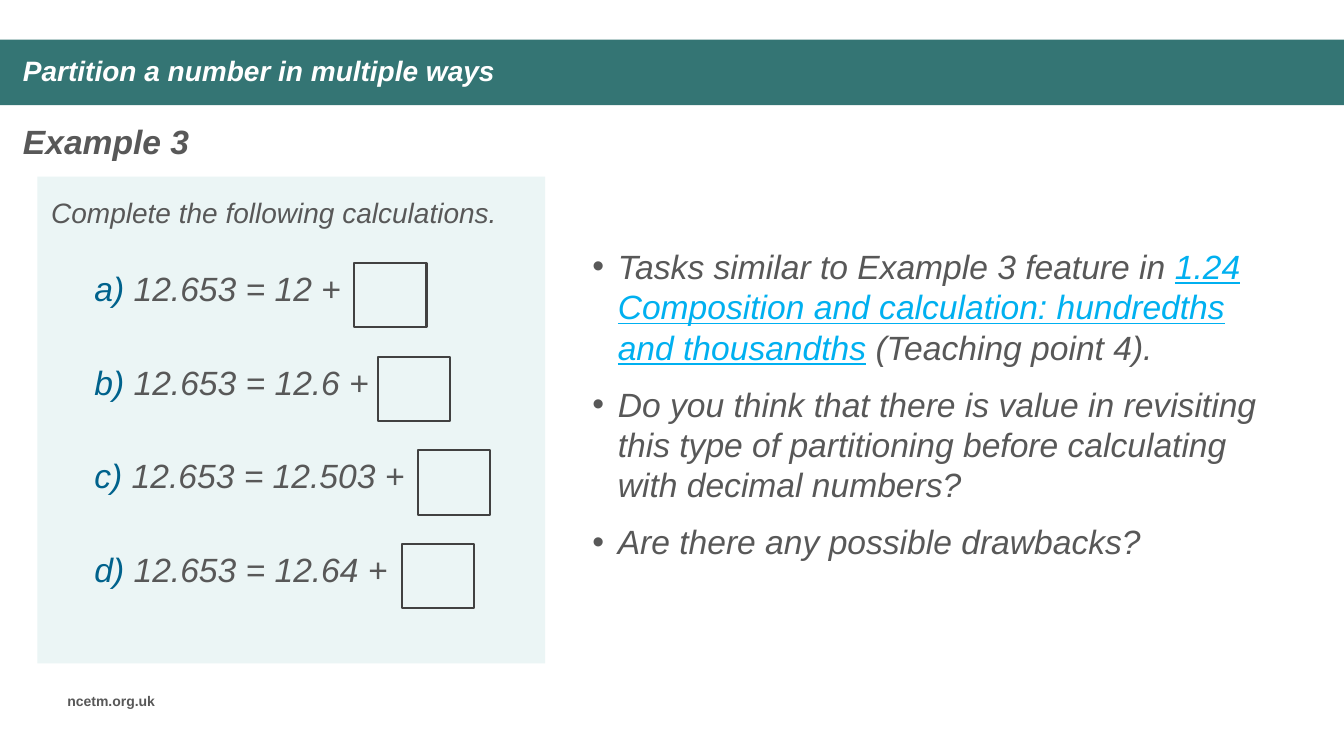
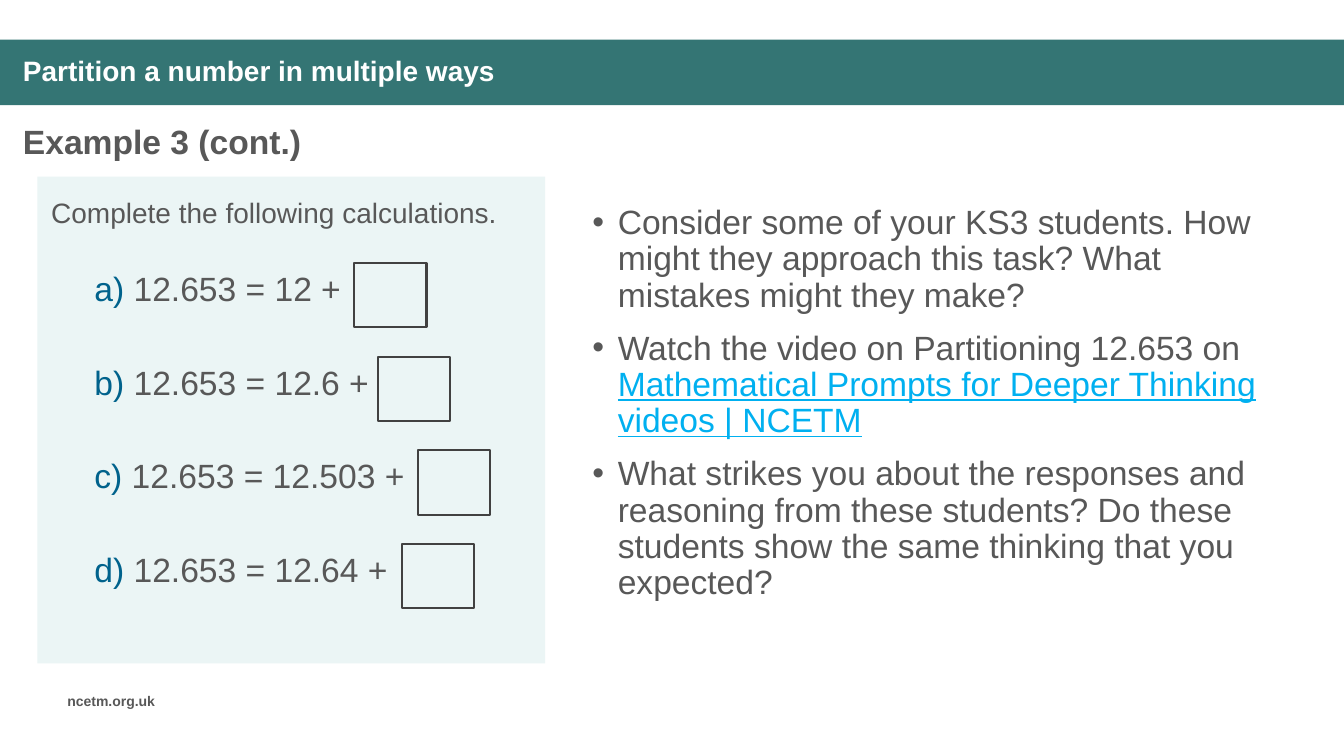
from dataclasses import dataclass

from lxml.etree import SubElement
from pptx import Presentation
from pptx.dml.color import RGBColor
from pptx.enum.shapes import MSO_SHAPE
from pptx.enum.text import MSO_ANCHOR
from pptx.oxml.ns import qn
from pptx.util import Cm, Pt


@dataclass(frozen=True)
class Theme:
    font: str = "Arial"
    band: str = "347574"
    panel: str = "EBF5F5"
    text: str = "585858"
    label: str = "00628C"
    link: str = "00B0F0"
    outline: str = "414141"
    white: str = "FFFFFF"
    body_size: int = 24
    title_size: int = 20
    footer_size: int = 10


THEME = Theme()
SLIDE_WIDTH, SLIDE_HEIGHT = 33.87, 19.05

TITLE = "Partition a number in multiple ways"
INSTRUCTION = "Complete the following calculations."
FOOTER = "ncetm.org.uk"

# Label, calculation and left edge of its answer box
CALCULATIONS = [
    ("a) ", "12.653 = 12 +", 8.93),
    ("b) ", "12.653 = 12.6 +", 9.53),
    ("c) ", "12.653 = 12.503 +", 10.53),
    ("d) ", "12.653 = 12.64 +", 10.13),
]
CALCULATION_LEFT, CALCULATION_TOP, CALCULATION_STEP = 2.13, 6.63, 2.36
ANSWER_WIDTH, ANSWER_HEIGHT = 1.82, 1.62


def link(text):
    return text, {"color": THEME.link, "underline": True}


SLIDES = [
    {
        "heading": "Example 3",
        "italic": True,
        "line_spacing": 1.0,
        "bullets": [
            ["Tasks similar to Example 3 feature in ",
             link("1.24 Composition and calculation: hundredths and thousandths"),
             " (Teaching point 4)."],
            ["Do you think that there is value in revisiting this type of "
             "partitioning before calculating with decimal numbers?"],
            ["Are there any possible drawbacks?"],
        ],
    },
    {
        "heading": "Example 3 (cont.)",
        "italic": False,
        "line_spacing": 0.9,
        "bullets": [
            ["Consider some of your KS3 students. How might they approach "
             "this task? What mistakes might they make?"],
            ["Watch the video on Partitioning 12.653 on ",
             link("Mathematical Prompts for Deeper Thinking videos | NCETM")],
            ["What strikes you about the responses and reasoning from these "
             "students? Do these students show the same thinking that you "
             "expected?"],
        ],
    },
]


def add_bullet(paragraph):
    properties = paragraph._p.get_or_add_pPr()
    properties.set("marL", str(Cm(0.99)))
    properties.set("indent", str(-Cm(0.64)))
    SubElement(properties, qn("a:buFont")).set("typeface", THEME.font)
    SubElement(properties, qn("a:buChar")).set("char", "•")


def add_text(slide, paragraphs, left, top, width, height, *, size=THEME.body_size,
             color=THEME.text, bold=False, italic=False, bullets=False,
             line_spacing=None, space_after=0, anchor=MSO_ANCHOR.TOP,
             right_inset=0.25):
    """Each paragraph is a list of runs: plain text, or (text, format changes)."""
    shape = slide.shapes.add_textbox(Cm(left), Cm(top), Cm(width), Cm(height))
    frame = shape.text_frame
    frame.word_wrap = True
    frame.vertical_anchor = anchor
    frame.margin_right = Cm(right_inset)
    for index, runs in enumerate(paragraphs):
        paragraph = frame.add_paragraph() if index else frame.paragraphs[0]
        if bullets:
            add_bullet(paragraph)
        paragraph.line_spacing = line_spacing
        paragraph.space_after = Pt(space_after)
        for item in runs:
            text, changes = (item, {}) if isinstance(item, str) else item
            run = paragraph.add_run()
            run.text = text
            font = run.font
            font.name, font.size = THEME.font, Pt(size)
            font.bold, font.italic = bold, italic
            font.underline = changes.get("underline", False)
            font.color.rgb = RGBColor.from_string(changes.get("color", color))


def add_rectangle(slide, left, top, width, height, *, fill=None, line=None):
    shape = slide.shapes.add_shape(
        MSO_SHAPE.RECTANGLE, Cm(left), Cm(top), Cm(width), Cm(height))
    shape.shadow.inherit = False
    if fill:
        shape.fill.solid()
        shape.fill.fore_color.rgb = RGBColor.from_string(fill)
    else:
        shape.fill.background()
    if line:
        shape.line.color.rgb = RGBColor.from_string(line)
        shape.line.width = Pt(1.5)
    else:
        shape.line.fill.background()


def add_frame(slide, heading, italic):
    # Title band, heading and footer
    add_rectangle(slide, 0, 1, SLIDE_WIDTH, 1.65, fill=THEME.band)
    add_text(slide, [[TITLE]], 0.33, 1.22, 31.3, 1.19, size=THEME.title_size,
             color=THEME.white, bold=True, italic=italic, line_spacing=0.9,
             anchor=MSO_ANCHOR.MIDDLE)
    add_text(slide, [[heading]], 0.33, 2.92, 16.92, 1.27, bold=True, italic=italic)
    add_text(slide, [[FOOTER]], 1.45, 17.32, 3.07, 0.69,
             size=THEME.footer_size, bold=True)


def add_task(slide, italic):
    # Panel with the calculations and their empty answer boxes
    add_rectangle(slide, 0.94, 4.45, 12.8, 12.27, fill=THEME.panel)
    add_text(slide, [[INSTRUCTION]], 1.04, 4.8, 12.7, 1.12,
             size=THEME.title_size, italic=italic)
    for row, (label, calculation, answer_left) in enumerate(CALCULATIONS):
        top = CALCULATION_TOP + row * CALCULATION_STEP
        add_text(slide, [[(label, {"color": THEME.label}), calculation]],
                 CALCULATION_LEFT, top, answer_left - CALCULATION_LEFT, 1.27,
                 italic=italic, right_inset=0)
        add_rectangle(slide, answer_left, top, ANSWER_WIDTH, ANSWER_HEIGHT,
                      line=THEME.outline)


def main():
    presentation = Presentation()
    presentation.slide_width = Cm(SLIDE_WIDTH)
    presentation.slide_height = Cm(SLIDE_HEIGHT)
    blank_layout = presentation.slide_layouts[6]
    for content in SLIDES:
        slide = presentation.slides.add_slide(blank_layout)
        italic = content["italic"]
        add_frame(slide, content["heading"], italic)
        add_task(slide, italic)
        # Discussion points
        add_text(slide, content["bullets"], 14.33, 4.83, 18.21, 10.69,
                 italic=italic, bullets=True, space_after=12,
                 line_spacing=content["line_spacing"], anchor=MSO_ANCHOR.MIDDLE)
    presentation.save("out.pptx")


if __name__ == "__main__":
    main()
